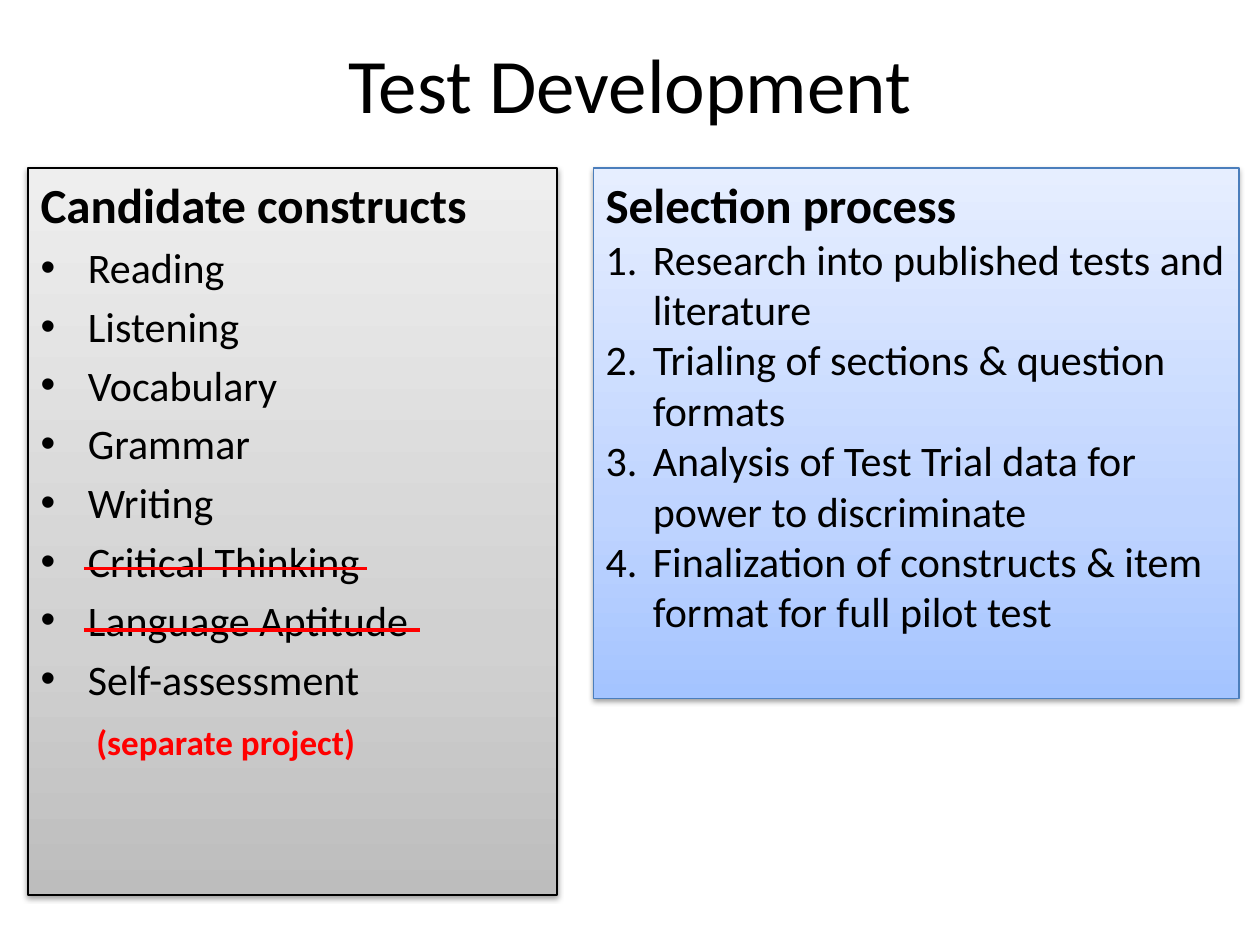
from dataclasses import dataclass

from lxml.etree import SubElement
from pptx import Presentation
from pptx.dml.color import RGBColor
from pptx.enum.shapes import MSO_CONNECTOR as Connector, MSO_SHAPE as Preset
from pptx.enum.text import MSO_ANCHOR as Anchor, MSO_AUTO_SIZE as AutoSize, PP_ALIGN as Align
from pptx.oxml.ns import qn
from pptx.util import Pt


@dataclass(frozen=True)
class Theme:
    font: str = "Calibri"
    ink: str = "000000"
    red: str = "FF0000"
    blue_edge: str = "4B7EBC"
    greys: tuple[str, ...] = ("BDBDBD", "D1D1D1", "EEEEEE")
    blues: tuple[str, ...] = ("A4C4FF", "BFD4FF", "E6EEFF")
    title: int = 44
    heading: int = 28
    item: int = 24
    note: int = 20


@dataclass(frozen=True)
class Box:
    left: float
    top: float
    width: float
    height: float


@dataclass(frozen=True)
class Panel:
    box: Box
    heading: str
    items: tuple[str, ...]
    gradient: tuple[str, ...]
    edge: str
    marker: str
    marker_settings: dict[str, str]


@dataclass(frozen=True)
class Strike:
    left: float
    right: float
    y: float


THEME = Theme()
INDENT = Pt(27)
STOPS = (0, 35, 100)

CONSTRUCTS = Panel(
    Box(16, 96, 302.4, 415.5), "Candidate constructs",
    ("Reading", "Listening", "Vocabulary", "Grammar", "Writing",
     "Critical Thinking", "Language Aptitude", "Self-assessment"),
    THEME.greys, THEME.ink, "a:buChar", {"char": "•"},
)
SELECTION = Panel(
    Box(339, 96, 369, 303), "Selection process",
    ("Research into published tests and literature",
     "Trialing of sections & question formats",
     "Analysis of Test Trial data for power to discriminate",
     "Finalization of constructs & item format for full pilot test"),
    THEME.blues, THEME.blue_edge, "a:buAutoNum", {"type": "arabicPeriod"},
)
STRIKES = (Strike(48, 210, 324.75), Strike(48, 240, 360))


def place(shape, box: Box) -> None:
    shape.left, shape.top = Pt(box.left), Pt(box.top)
    shape.width, shape.height = Pt(box.width), Pt(box.height)


def style(paragraph, size: int, color: str = THEME.ink, bold: bool = False) -> None:
    for run in paragraph.runs:
        run.font.name = THEME.font
        run.font.size = Pt(size)
        run.font.bold = bold
        run.font.color.rgb = RGBColor.from_string(color)


def add_shadow(shape) -> None:
    shape.shadow.inherit = False
    effects = shape._element.spPr.find(qn("a:effectLst"))
    shadow = SubElement(effects, qn("a:outerShdw"), blurRad=str(Pt(3.1)),
                        dist=str(Pt(1.6)), dir="5400000", rotWithShape="0")
    tint = SubElement(shadow, qn("a:srgbClr"), val=THEME.ink)
    SubElement(tint, qn("a:alpha"), val="38000")


def fill_gradient(shape, colors: tuple[str, ...]) -> None:
    shape.fill.gradient()
    shape.fill.gradient_angle = 90
    stops = shape._element.spPr.find(".//" + qn("a:gsLst"))
    for stop in list(stops):
        stops.remove(stop)
    for position, color in zip(STOPS, colors):
        stop = SubElement(stops, qn("a:gs"), pos=str(position * 1000))
        SubElement(stop, qn("a:srgbClr"), val=color)


def set_marker(paragraph, indent: int, marker: str, settings: dict[str, str]) -> None:
    properties = paragraph._p.get_or_add_pPr()
    properties.set("marL", str(indent))
    properties.set("indent", str(-indent))
    SubElement(properties, qn(marker), settings)


def draw_panel(shape, panel: Panel) -> None:
    place(shape, panel.box)
    fill_gradient(shape, panel.gradient)
    shape.line.color.rgb = RGBColor.from_string(panel.edge)
    shape.line.width = Pt(0.75)
    add_shadow(shape)
    frame = shape.text_frame
    frame.text = "\n".join((panel.heading, *panel.items))
    frame.word_wrap = True
    frame.auto_size = AutoSize.NONE
    frame.vertical_anchor = Anchor.TOP
    heading, *items = frame.paragraphs
    heading.alignment = Align.LEFT
    style(heading, THEME.heading, bold=True)
    set_marker(heading, 0, "a:buNone", {})
    for item in items:
        item.alignment = Align.LEFT
        style(item, THEME.item)
        set_marker(item, INDENT, panel.marker, panel.marker_settings)


def draw_strike(slide, strike: Strike) -> None:
    line = slide.shapes.add_connector(
        Connector.STRAIGHT, Pt(strike.left), Pt(strike.y), Pt(strike.right), Pt(strike.y))
    line.line.color.rgb = RGBColor.from_string(THEME.red)
    line.line.width = Pt(2)
    SubElement(line._element.spPr, qn("a:effectLst"))


def draw_note(slide, text: str, box: Box) -> None:
    note = slide.shapes.add_textbox(0, 0, 0, 0)
    place(note, box)
    note.text_frame.text = text
    note.text_frame.word_wrap = True
    style(note.text_frame.paragraphs[0], THEME.note, THEME.red, bold=True)


def main() -> None:
    deck = Presentation()
    deck.slide_width, deck.slide_height = Pt(720), Pt(540)
    slide = deck.slides.add_slide(deck.slide_layouts[1])

    title = slide.shapes.title
    place(title, Box(36, 2, 648, 90))
    title.text_frame.text = "Test Development"
    title.text_frame.vertical_anchor = Anchor.MIDDLE
    title.text_frame.paragraphs[0].alignment = Align.CENTER
    style(title.text_frame.paragraphs[0], THEME.title)

    draw_panel(slide.placeholders[1], CONSTRUCTS)
    draw_panel(slide.shapes.add_shape(Preset.RECTANGLE, 0, 0, 0, 0), SELECTION)
    for strike in STRIKES:
        draw_strike(slide, strike)
    draw_note(slide, "(separate project)", Box(48, 408, 222, 31.5))
    deck.save("out.pptx")


if __name__ == "__main__":
    main()
